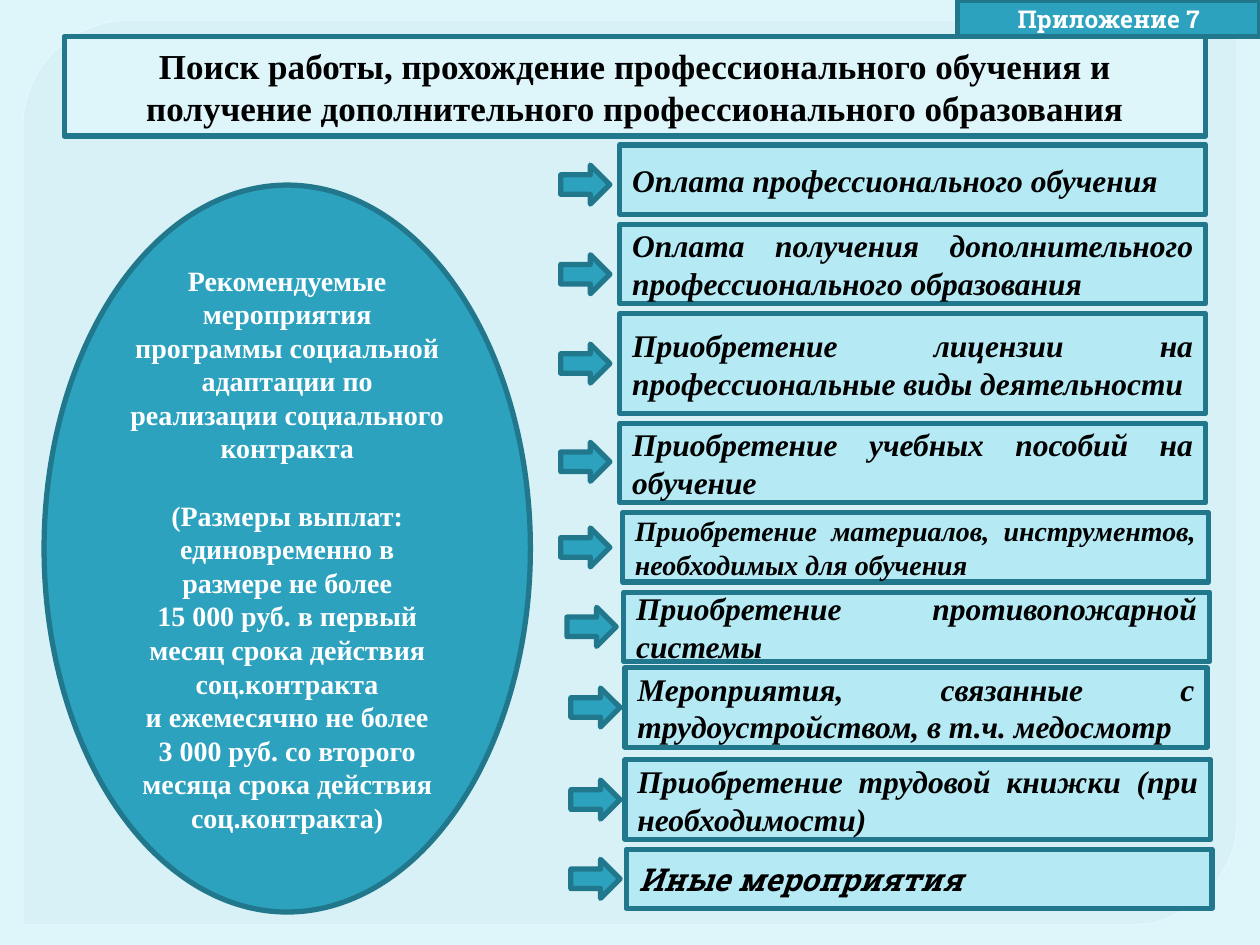
from lxml import etree
from pptx import Presentation
from pptx.dml.color import RGBColor
from pptx.enum.shapes import MSO_SHAPE
from pptx.enum.text import MSO_ANCHOR, PP_ALIGN
from pptx.oxml.ns import qn
from pptx.util import Pt

RECT = MSO_SHAPE.RECTANGLE
OVAL = MSO_SHAPE.OVAL
ARROW = MSO_SHAPE.RIGHT_ARROW
PANEL = MSO_SHAPE.ROUND_2_DIAG_RECTANGLE
MIDDLE = MSO_ANCHOR.MIDDLE
CENTER = PP_ALIGN.CENTER
JUSTIFY = PP_ALIGN.JUSTIFY

PALE = RGBColor(0xDE, 0xF5, 0xFA)
PANEL_FILL = RGBColor(0xD4, 0xEF, 0xF5)
PANEL_EDGE = RGBColor(0xE2, 0xFA, 0xFF)
LIGHT = RGBColor(0xB5, 0xE9, 0xF4)
TEAL = RGBColor(0x2D, 0xA2, 0xBF)
DARK_TEAL = RGBColor(0x21, 0x78, 0x8D)
BLACK = RGBColor(0, 0, 0)
WHITE = RGBColor(0xFF, 0xFF, 0xFF)

SERIF = "Times New Roman"
SLAB = "Roboto Slab"

ARROW_WIDTH, ARROW_HEIGHT = 28.1, 22.3

TITLE = ("Поиск работы, прохождение профессионального обучения и "
         "получение дополнительного профессионального образования")

PROGRAMME = [
    ("Рекомендуемые мероприятия программы социальной адаптации "
     "по реализации социального контракта", 0),
    ("(Размеры выплат: единовременно в размере не более\v"
     "15 000 руб. в первый месяц срока действия соц.контракта", 19.2),
    ("и ежемесячно не более", 0),
    ("3 000 руб. со второго месяца срока действия соц.контракта)", 0),
]

# label, box (left, top, width, height), arrow left, arrow drop, font size, font
MEASURES = [
    ("Оплата профессионального обучения",
     (354.2, 82.8, 334.8, 39.6), 320.4, 2.9, 18, SERIF),
    ("Оплата получения дополнительного профессионального образования",
     (354.2, 128.2, 334.8, 45.4), 320.4, 5.8, 18, SERIF),
    ("Приобретение лицензии на профессиональные виды деятельности",
     (354.2, 179.3, 334.8, 56.9), 320.4, 0, 18, SERIF),
    ("Приобретение учебных пособий на обучение",
     (354.2, 241.9, 334.8, 45.4), 320.4, -0.7, 18, SERIF),
    ("Приобретение материалов, инструментов, необходимых для обучения",
     (355.7, 293, 334.8, 39.6), 320.4, 0, 16, SERIF),
    ("Приобретение противопожарной системы",
     (356.4, 338.4, 334.8, 39.6), 324, 0, 18, SERIF),
    ("Мероприятия, связанные с трудоустройством, в т.ч. медосмотр",
     (357.1, 381.6, 332.6, 45.4), 326.2, 0, 18, SERIF),
    ("Приобретение трудовой книжки (при необходимости)",
     (357.1, 434.2, 334.8, 45.4), 326.2, 0, 18, SERIF),
    ("Иные мероприятия",
     (357.8, 485.3, 334.8, 33.8), 326.2, 0, 18, SLAB),
]


def add_figure(slide, kind, box, fill, edge=DARK_TEAL, weight=3):
    figure = slide.shapes.add_shape(kind, *(Pt(length) for length in box))
    figure.shadow.inherit = False
    figure.fill.solid()
    figure.fill.fore_color.rgb = fill
    figure.line.color.rgb = edge
    figure.line.width = Pt(weight)
    return figure


def write_text(figure, paragraphs, align, color, size, font=SERIF, italic=False):
    style = {"name": font, "size": Pt(size), "bold": True, "italic": italic}
    frame = figure.text_frame
    frame.word_wrap = True
    frame.vertical_anchor = MIDDLE
    for index, (text, space_before) in enumerate(paragraphs):
        paragraph = frame.add_paragraph() if index else frame.paragraphs[0]
        paragraph.text = text
        paragraph.alignment = align
        paragraph.space_before = Pt(space_before)
        for run in paragraph.runs:
            for attribute, value in style.items():
                setattr(run.font, attribute, value)
            run.font.color.rgb = color


def add_panel(slide):
    panel = add_figure(slide, PANEL, (13, 11.5, 694.1, 517), PANEL_FILL,
                       PANEL_EDGE, 0.87)
    panel.adjustments[0] = 0.118
    panel.adjustments[1] = 0
    colors = panel.element.spPr.iter(qn("a:srgbClr"))
    for color, opacity in zip(list(colors), (65, 88)):
        etree.SubElement(color, qn("a:alpha"), val=str(opacity * 1000))


def add_measure(slide, label, box, arrow_left, arrow_drop, size, font):
    measure = add_figure(slide, RECT, box, LIGHT)
    write_text(measure, [(label, 0)], JUSTIFY, BLACK, size, font, italic=True)
    arrow_top = box[1] + (box[3] - ARROW_HEIGHT) / 2 + arrow_drop
    add_figure(slide, ARROW, (arrow_left, arrow_top, ARROW_WIDTH, ARROW_HEIGHT), TEAL)


def main():
    deck = Presentation()
    deck.slide_width, deck.slide_height = Pt(720), Pt(540)
    slide = deck.slides.add_slide(deck.slide_layouts[6])
    slide.background.fill.solid()
    slide.background.fill.fore_color.rgb = PALE

    add_panel(slide)
    title = add_figure(slide, RECT, (36.7, 20.9, 652.3, 56.9), PALE)
    write_text(title, [(TITLE, 0)], CENTER, BLACK, 20)
    programme = add_figure(slide, OVAL, (25.2, 105.8, 277.9, 415.4), TEAL)
    write_text(programme, PROGRAMME, CENTER, WHITE, 16)
    for measure in MEASURES:
        add_measure(slide, *measure)
    appendix = add_figure(slide, RECT, (547.2, 0, 172.8, 20.9), TEAL)
    write_text(appendix, [("Приложение 7", 0)], CENTER, WHITE, 14, SLAB)

    deck.save("out.pptx")


if __name__ == "__main__":
    main()
